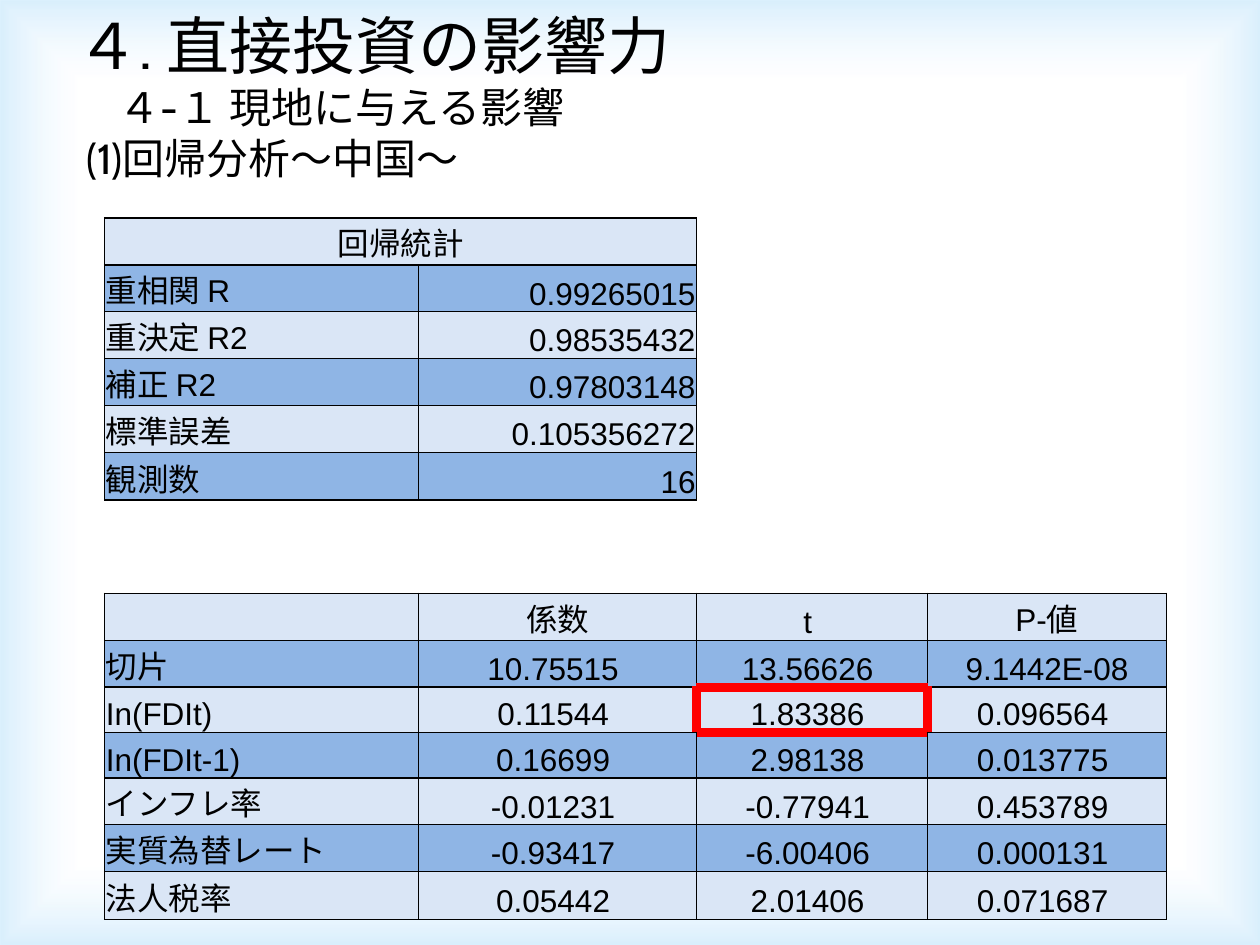
import pptx
import pptx.dml.color
import pptx.enum.shapes
import pptx.enum.text
import pptx.oxml
import pptx.oxml.ns
import pptx.util

BLACK = pptx.dml.color.RGBColor(0x00, 0x00, 0x00)
WHITE = pptx.dml.color.RGBColor(0xFF, 0xFF, 0xFF)
SKY = pptx.dml.color.RGBColor(0x5B, 0xBA, 0xF6)
PALE = pptx.dml.color.RGBColor(0xDA, 0xE6, 0xF6)
BLUE = pptx.dml.color.RGBColor(0x8F, 0xB5, 0xE5)
RED = pptx.dml.color.RGBColor(0xFF, 0x00, 0x00)

LEFT = pptx.enum.text.PP_ALIGN.LEFT
CENTER = pptx.enum.text.PP_ALIGN.CENTER
RIGHT = pptx.enum.text.PP_ALIGN.RIGHT

NAMESPACE = pptx.oxml.ns.nsdecls("a")
NO_STYLE = "{2D5ABB26-0587-4C30-8999-92F81FD0307C}"

HEADINGS = [
    ("４. 直接投資の影響力", 36),
    ("\u3000４-１ 現地に与える影響", 24),
    (" (1)回帰分析～中国～", 24),
]
STATISTICS = [
    ("回帰統計", ""),
    ("重相関 R", "0.99265015"),
    ("重決定 R2", "0.98535432"),
    ("補正 R2", "0.97803148"),
    ("標準誤差", "0.105356272"),
    ("観測数", "16"),
]
COEFFICIENTS = [
    ("", "係数", "t ", "P-値"),
    ("切片", "10.75515 ", "13.56626 ", "9.1442E-08"),
    ("In(FDIt)", "0.11544 ", "1.83386 ", "0.096564 "),
    ("In(FDIt-1)", "0.16699 ", "2.98138 ", "0.013775 "),
    ("インフレ率", "-0.01231 ", "-0.77941 ", "0.453789 "),
    ("実質為替レート", "-0.93417 ", "-6.00406 ", "0.000131 "),
    ("法人税率", "0.05442 ", "2.01406 ", "0.071687 "),
]
STATISTICS_ROW = 2
COEFFICIENTS_ROW = 10
HIGHLIGHT = (12, 2)
COLUMN_WIDTHS = [2.49, 2.21, 1.83, 1.9]
ROW_HEIGHTS = [0.38 if row in (1, 7, 9, 16) else 0.36 for row in range(17)]


class SlideBuilder:
    """Holds the text style and the current slide, and draws each kind of element."""

    def __init__(self, presentation, heading_font, table_font, table_size):
        self.width = presentation.slide_width
        self.height = presentation.slide_height
        self.heading_font = heading_font
        self.table_font = table_font
        self.table_size = table_size
        self.slide = presentation.slides.add_slide(presentation.slide_layouts[6])

    def box(self, left, top, width, height):
        return (int(left * self.width), int(top * self.height),
                int(width * self.width), int(height * self.height))

    def run(self, paragraph, text, font, size):
        run = paragraph.add_run()
        run.text = text
        run.font.name = font
        run.font.size = pptx.util.Pt(size)
        run.font.color.rgb = BLACK

    def glow(self, stops):
        shape = self.slide.shapes.add_shape(
            pptx.enum.shapes.MSO_SHAPE.RECTANGLE, *self.box(0, 0, 1, 1))
        shape.shadow.inherit = False
        shape.line.fill.background()
        shape.fill.background()
        properties = shape._element.spPr
        stop_xml = "".join(
            f'<a:gs pos="{position * 1000}"><a:srgbClr val="{color}">'
            f'<a:alpha val="{alpha * 1000}"/></a:srgbClr></a:gs>'
            for position, color, alpha in stops)
        gradient = pptx.oxml.parse_xml(
            f'<a:gradFill {NAMESPACE} rotWithShape="1"><a:gsLst>{stop_xml}</a:gsLst>'
            '<a:path path="rect"><a:fillToRect l="50000" t="50000" r="50000" b="50000"/>'
            '</a:path></a:gradFill>')
        properties.replace(properties.find(pptx.oxml.ns.qn("a:noFill")), gradient)

    def headings(self, lines, *place):
        frame = self.slide.shapes.add_textbox(*self.box(*place)).text_frame
        frame.word_wrap = True
        for index, (text, size) in enumerate(lines):
            paragraph = frame.add_paragraph() if index else frame.paragraphs[0]
            self.run(paragraph, text, self.heading_font, size)

    def table(self, widths, heights, *place):
        frame = self.slide.shapes.add_table(len(heights), len(widths), *self.box(*place))
        table = frame.table
        table.first_row = table.horz_banding = False
        table._tbl.tblPr.find(pptx.oxml.ns.qn("a:tableStyleId")).text = NO_STYLE
        for column, width in zip(table.columns, widths):
            column.width = pptx.util.Inches(width)
        for row, height in zip(table.rows, heights):
            row.height = pptx.util.Inches(height)
        for cell in table.iter_cells():
            cell.margin_left = cell.margin_top = cell.margin_right = pptx.util.Inches(0.01)
            cell.margin_bottom = 0
            cell.vertical_anchor = pptx.enum.text.MSO_ANCHOR.BOTTOM
        return table

    def borders(self, cell, row, column):
        neighbours = {"L": (row, column - 1), "R": (row, column + 1),
                      "T": (row - 1, column), "B": (row + 1, column)}
        for side, neighbour in neighbours.items():
            marked = HIGHLIGHT in ((row, column), neighbour)
            color, points = (RED, 6) if marked else (BLACK, 1)
            cell._tc.get_or_add_tcPr().append(pptx.oxml.parse_xml(
                f'<a:ln{side} {NAMESPACE} w="{points * 12700}"><a:solidFill>'
                f'<a:srgbClr val="{color}"/></a:solidFill></a:ln{side}>'))

    def block(self, table, first_row, records, value_alignment):
        for row, record in enumerate(records, first_row):
            for column, text in enumerate(record):
                cell = table.cell(row, column)
                self.borders(cell, row, column)
                cell.fill.solid()
                cell.fill.fore_color.rgb = BLUE if row % 2 else PALE
                paragraph = cell.text_frame.paragraphs[0]
                paragraph.alignment = value_alignment if column else LEFT
                if text:
                    self.run(paragraph, text, self.table_font, self.table_size)


def main():
    presentation = pptx.Presentation()
    presentation.slide_width = pptx.util.Inches(10)
    presentation.slide_height = pptx.util.Inches(7.5)
    builder = SlideBuilder(presentation, "Cabin", "Arial", 18)
    builder.glow([(83, WHITE, 11), (100, SKY, 23)])
    table = builder.table(COLUMN_WIDTHS, ROW_HEIGHTS, 0.083, 0.132, 0.843, 0.819)
    builder.block(table, STATISTICS_ROW, STATISTICS, RIGHT)
    builder.block(table, COEFFICIENTS_ROW, COEFFICIENTS, CENTER)
    title = table.cell(STATISTICS_ROW, 0)
    title.merge(table.cell(STATISTICS_ROW, 1))
    title.text_frame.paragraphs[0].alignment = CENTER
    builder.headings(HEADINGS, 0.051, 0, 0.638, 0.2)
    presentation.save("out.pptx")


if __name__ == "__main__":
    main()
